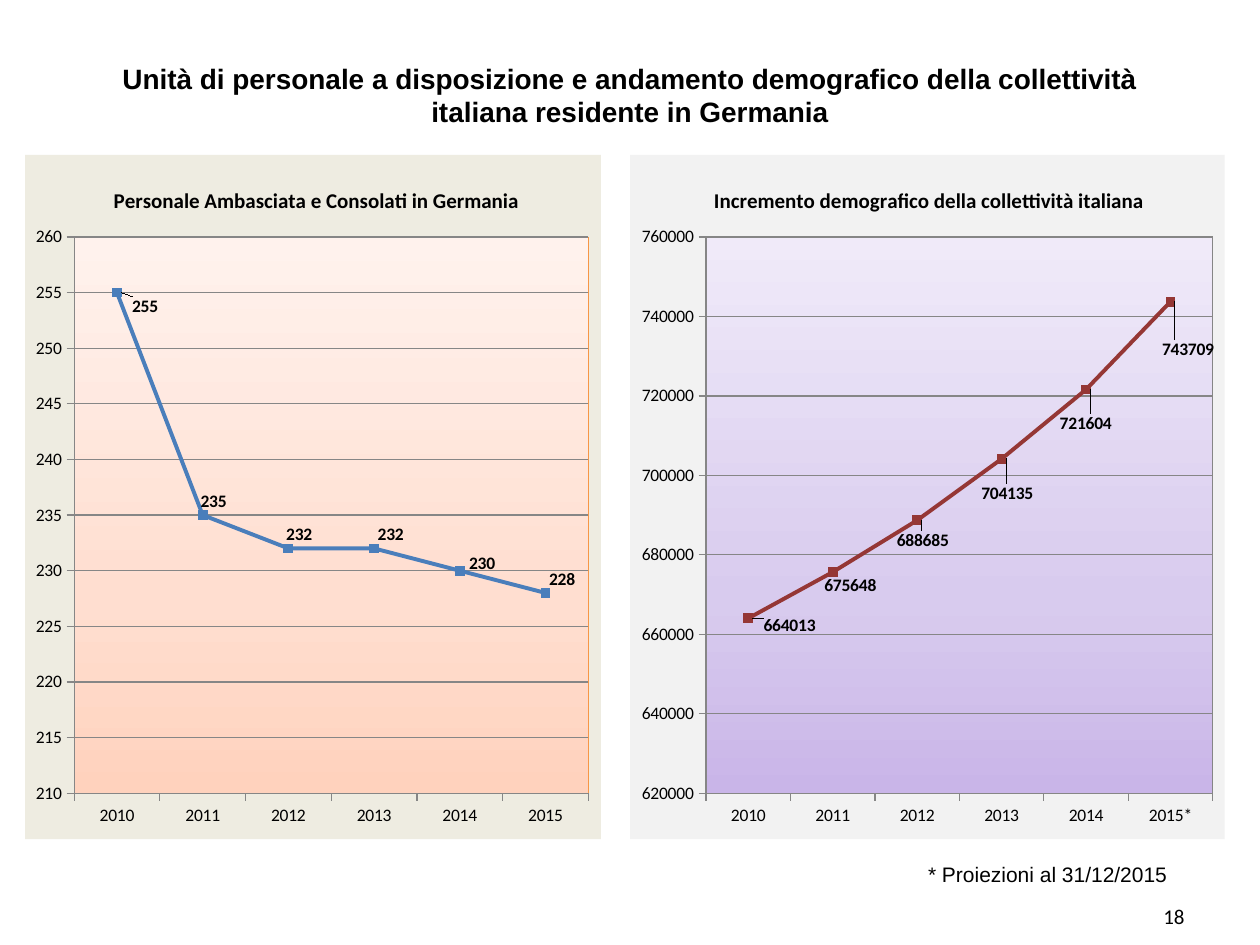
from dataclasses import dataclass
from typing import Any

from lxml import etree
from pptx import Presentation
from pptx import util as u
from pptx.chart.data import CategoryChartData
from pptx.dml.color import RGBColor
from pptx.enum import chart as ch, text
from pptx.oxml import parse_xml
from pptx.oxml.ns import nsdecls, qn

SLIDE_W, SLIDE_H = u.Inches(10), u.Inches(7.5)
NS = nsdecls("c", "a")
YEARS = ("2010", "2011", "2012", "2013", "2014")
GRADIENT_STOPS = (0, 35, 100)
CHART_TOP, CHART_HEIGHT = 0.164, 0.724


@dataclass(frozen=True)
class Trend:
    title: str
    last_year: str
    values: tuple[int, ...]
    label_shifts: tuple[tuple[float, float], ...]
    left: float
    width: float
    plot_left: float
    plot_width: float
    title_left: float
    scale: tuple[int, int, int]
    line: str
    background: str
    gradient: tuple[str, str, str]
    border: str


TRENDS = (
    Trend("Personale Ambasciata e Consolati in Germania", "2015",
          (255, 235, 232, 232, 230, 228),
          ((0.01, 0.02), (-0.02, -0.02), (-0.02, -0.02),
           (-0.01, -0.02), (0, -0.01), (-0.01, -0.02)),
          0.02, 0.457, 0.085, 0.893, 0.147, (210, 260, 5),
          "4A7EBB", "EEECE1", ("FFD2BD", "FFDED0", "FFF2ED"), "F79646"),
    Trend("Incremento demografico della collettività italiana", "2015*",
          (664013, 675648, 688685, 704135, 721604, 743709),
          ((0.01, 0.01), (-0.03, 0.02), (-0.05, 0.03),
           (-0.05, 0.05), (-0.06, 0.05), (-0.03, 0.07)),
          0.5, 0.472, 0.128, 0.852, 0.135, (620000, 760000, 20000),
          "953735", "F2F2F2", ("C9B5E8", "D8CBEE", "F0EAF9"), "868686"),
)


def colour(value: str) -> RGBColor:
    return RGBColor.from_string(value)


def apply(target: Any, formats: dict[str, Any]) -> None:
    for name, value in formats.items():
        setattr(target, name, value)


def style_font(font: Any, size: float, bold: bool = False, name: str = "Calibri") -> None:
    apply(font, {"size": u.Pt(size), "bold": bold, "name": name})
    font.color.rgb = colour("000000")


def area(left: float, top: float, width: float, height: float) -> tuple[int, ...]:
    return (int(SLIDE_W * left), int(SLIDE_H * top),
            int(SLIDE_W * width), int(SLIDE_H * height))


def manual_layout(inner: bool = False, **shares: float) -> etree._Element:
    target = '<c:layoutTarget val="inner"/>' if inner else ""
    modes = '<c:xMode val="edge"/><c:yMode val="edge"/>' if inner or "edge" in shares else ""
    sizes = "".join(f'<c:{key} val="{value}"/>' for key, value in shares.items() if key != "edge")
    return parse_xml(f"<c:layout {NS}><c:manualLayout>{target}{modes}{sizes}"
                     "</c:manualLayout></c:layout>")


def place(parent: etree._Element, index: int, layout: etree._Element) -> None:
    for previous in parent.findall(qn("c:layout")):
        parent.remove(previous)
    parent.insert(index, layout)


def surface(fill: str, border: str) -> etree._Element:
    return parse_xml(f"<c:spPr {NS}>{fill}<a:ln>{border}</a:ln></c:spPr>")


def solid(value: str) -> str:
    return f'<a:solidFill><a:srgbClr val="{value}"/></a:solidFill>'


def upward_gradient(colours: tuple[str, ...]) -> str:
    stops = "".join(f'<a:gs pos="{stop * 1000}"><a:srgbClr val="{value}"/></a:gs>'
                    for stop, value in zip(GRADIENT_STOPS, colours))
    return f'<a:gradFill><a:gsLst>{stops}</a:gsLst><a:lin ang="16200000" scaled="0"/></a:gradFill>'


def style_line(line: Any, value: str, width: float) -> None:
    line.color.rgb = colour(value)
    line.width = u.Pt(width)


def style_axes(chart: Any, trend: Trend) -> None:
    low, high, step = trend.scale
    apply(chart.value_axis, {"minimum_scale": low, "maximum_scale": high,
                             "major_unit": step, "has_major_gridlines": True})
    style_line(chart.value_axis.major_gridlines.format.line, "868686", 0.75)
    for axis in (chart.category_axis, chart.value_axis):
        apply(axis, {"major_tick_mark": ch.XL_TICK_MARK.OUTSIDE,
                     "minor_tick_mark": ch.XL_TICK_MARK.NONE})
        style_line(axis.format.line, "868686", 0.75)


def style_series(series: Any, trend: Trend) -> None:
    series.smooth = False
    style_line(series.format.line, trend.line, 2.25)
    apply(series.marker, {"style": ch.XL_MARKER_STYLE.SQUARE, "size": 5})
    series.marker.format.fill.solid()
    series.marker.format.fill.fore_color.rgb = colour(trend.line)
    style_line(series.marker.format.line, trend.line, 0.75)
    for index, (x, y) in enumerate(trend.label_shifts):
        label = series.points[index].data_label
        style_font(label.font, 10, True)
        label.position = ch.XL_LABEL_POSITION.RIGHT
        entry = series.data_labels._element.findall(qn("c:dLbl"))[index]
        place(entry, 1, manual_layout(x=x, y=y))
    apply(series.data_labels, {"show_value": True})
    style_font(series.data_labels.font, 10, True)


def draw_trend(slide: Any, trend: Trend) -> None:
    data = CategoryChartData()
    data.categories = YEARS + (trend.last_year,)
    data.add_series(trend.title, trend.values)
    chart = slide.shapes.add_chart(
        ch.XL_CHART_TYPE.LINE_MARKERS_STACKED,
        *area(trend.left, CHART_TOP, trend.width, CHART_HEIGHT), data).chart
    apply(chart, {"has_legend": False, "has_title": True})
    style_font(chart.font, 10)
    chart.plots[0].vary_by_categories = False
    heading = chart.chart_title.text_frame
    heading.text = trend.title
    style_font(heading.paragraphs[0].runs[0].font, 12, True)
    style_axes(chart, trend)
    style_series(chart.plots[0].series[0], trend)

    root = chart._chartSpace
    place(root.find(".//" + qn("c:title")), 1,
          manual_layout(edge=True, x=trend.title_left, y=0.04))
    plot_area = root.find(".//" + qn("c:plotArea"))
    place(plot_area, 0, manual_layout(True, x=trend.plot_left, y=0.12,
                                      w=trend.plot_width, h=0.813))
    plot_area.append(surface(upward_gradient(trend.gradient), solid(trend.border)))
    root.find(qn("c:txPr")).addprevious(surface(solid(trend.background), "<a:noFill/>"))


def write(shape: Any, words: str, align: Any, size: float,
          bold: bool = False, name: str = "Arial") -> None:
    frame = shape.text_frame
    apply(frame, {"word_wrap": True, "vertical_anchor": text.MSO_ANCHOR.MIDDLE,
                  "auto_size": text.MSO_AUTO_SIZE.NONE})
    frame.text = words
    frame.paragraphs[0].alignment = align
    style_font(frame.paragraphs[0].runs[0].font, size, bold, name)


def main() -> None:
    deck = Presentation()
    apply(deck, {"slide_width": SLIDE_W, "slide_height": SLIDE_H})
    slide = deck.slides.add_slide(deck.slide_layouts[5])
    heading = slide.shapes.title
    apply(heading, dict(zip(("left", "top", "width", "height"),
                            area(0.05, 0.017, 0.9, 0.167))))
    write(heading, "Unità di personale a disposizione e andamento demografico "
          "della collettività italiana residente in Germania",
          text.PP_ALIGN.CENTER, 16, True)
    for trend in TRENDS:
        draw_trend(slide, trend)
    footnote = slide.shapes.add_textbox(*area(0.531, 0.905, 0.41, 0.04))
    write(footnote, "* Proiezioni al 31/12/2015 ", text.PP_ALIGN.RIGHT, 12)
    page_number = slide.shapes.add_textbox(*area(0.717, 0.943, 0.233, 0.053))
    write(page_number, "18", text.PP_ALIGN.RIGHT, 12, name="Calibri")
    deck.save("out.pptx")


if __name__ == "__main__":
    main()
